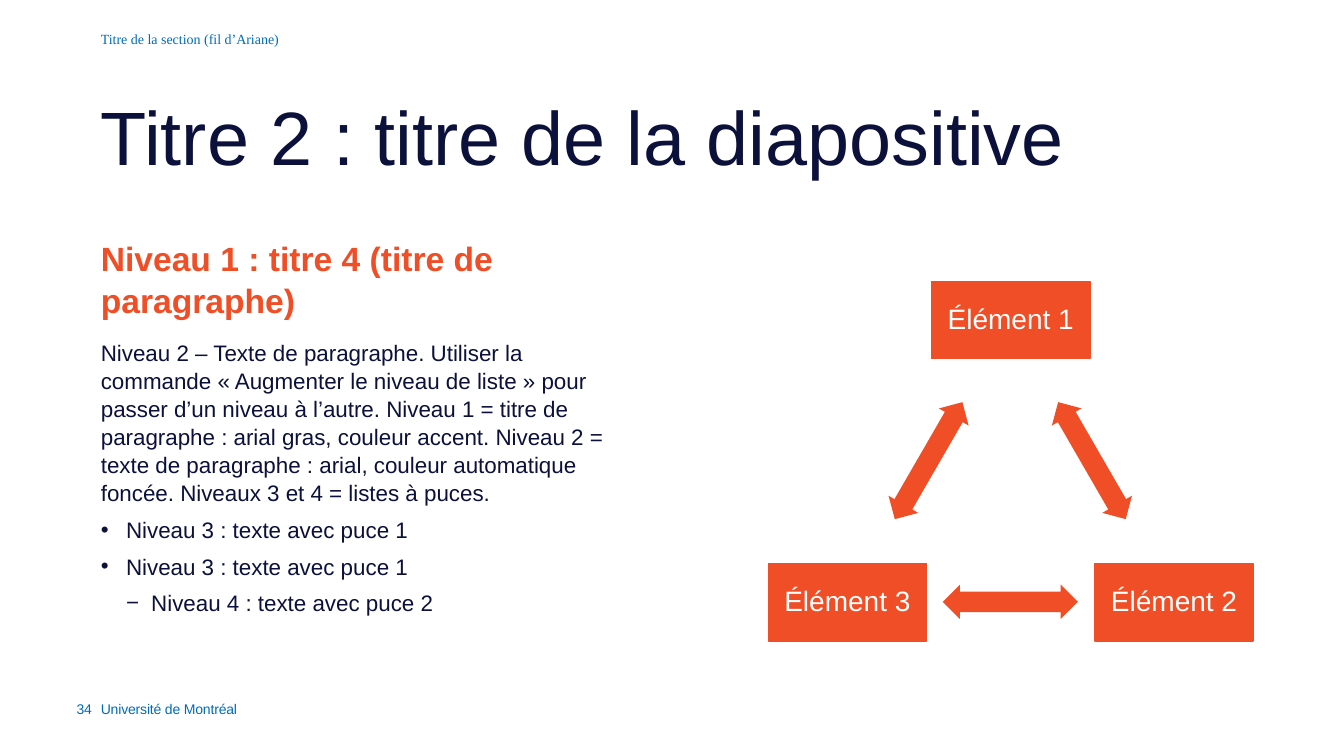
import lxml.etree
import pptx
import pptx.dml.color
import pptx.enum.shapes
import pptx.enum.text
import pptx.oxml.ns
import pptx.util

PX = 9144  # EMU per px, 100 px to the inch
THEME = {
    "accent": "F04E26", "dark": "0B113A", "link": "006CB7", "light": "FFFFFF",
    "title": 54, "heading": 24, "element": 20, "text": 16, "small": 10,
    "sans": "Arial", "serif": "Times New Roman",
}
ALIGN = pptx.enum.text.PP_ALIGN
ANCHOR = pptx.enum.text.MSO_ANCHOR
SHAPE = pptx.enum.shapes.MSO_SHAPE
qn = pptx.oxml.ns.qn


def color(name):
    return pptx.dml.color.RGBColor.from_string(THEME[name])


def write(frame, text, size="text", ink="dark", font="sans", bold=False,
          align=ALIGN.LEFT, anchor=ANCHOR.TOP, inset=0, level=0, line=1.0,
          before=0, after=0, left=0, hang=0, bullet=None, tracking=0):
    """Fill the first empty paragraph of the frame, or append a new one."""
    frame.word_wrap = True
    frame.auto_size = pptx.enum.text.MSO_AUTO_SIZE.NONE
    frame.vertical_anchor = anchor
    frame.margin_left = frame.margin_right = inset * PX
    frame.margin_top = frame.margin_bottom = inset * PX

    paragraph = frame.paragraphs[0] if not frame.text else frame.add_paragraph()
    paragraph.level = level
    paragraph.alignment = align
    paragraph.line_spacing = line
    paragraph.space_before = pptx.util.Pt(before)
    paragraph.space_after = pptx.util.Pt(after)
    properties = paragraph._p.get_or_add_pPr()
    properties.set("marL", str(left * PX))
    properties.set("indent", str(-hang * PX))
    if bullet:
        tint = lxml.etree.SubElement(properties, qn("a:buClr"))
        lxml.etree.SubElement(tint, qn("a:srgbClr"), val=THEME[ink])
        lxml.etree.SubElement(properties, qn("a:buFont"), typeface=THEME[font])
        lxml.etree.SubElement(properties, qn("a:buChar"), char=bullet)
    else:
        lxml.etree.SubElement(properties, qn("a:buNone"))

    run = paragraph.add_run()
    run.text = text
    run.font.name = THEME[font]
    run.font.size = pptx.util.Pt(THEME[size])
    run.font.bold = bold
    run.font.color.rgb = color(ink)
    if tracking:
        run._r.get_or_add_rPr().set("spc", str(tracking))


presentation = pptx.Presentation()
presentation.slide_width = 1333 * PX
presentation.slide_height = 750 * PX
slide = presentation.slides.add_slide(presentation.slide_layouts[3])

# Title, body and breadcrumb
title, body, breadcrumb = slide.placeholders
for holder, box in (
    (title, (100, 94, 1150, 91)),
    (body, (100, 234, 520, 436)),
    (breadcrumb, (100, 30, 484, 45)),
):
    holder.left, holder.top, holder.width, holder.height = (n * PX for n in box)

write(title.text_frame, "Titre 2 : titre de la diapositive", size="title",
      line=0.9, anchor=ANCHOR.MIDDLE)
write(breadcrumb.text_frame, "Titre de la section (fil d’Ariane)", size="small",
      ink="link", font="serif")

write(body.text_frame, "Niveau 1 : titre 4 (titre de paragraphe)", size="heading",
      ink="accent", bold=True, line=1.05, after=6)
write(body.text_frame,
      "Niveau 2 – Texte de paragraphe. Utiliser la commande « Augmenter le niveau "
      "de liste » pour passer d’un niveau à l’autre. Niveau 1 = titre de paragraphe : "
      "arial gras, couleur accent. Niveau 2 = texte de paragraphe : arial, couleur "
      "automatique foncée. Niveaux 3 et 4 = listes à puces.",
      level=1, line=1.05, before=6, after=6)
for text, level, left, bullet in (
    ("Niveau 3 : texte avec puce 1", 2, 25, "•"),
    ("Niveau 3 : texte avec puce 1", 2, 25, "•"),
    ("Niveau 4 : texte avec puce 2", 3, 50, "−"),
):
    write(body.text_frame, text, level=level, line=1.05, after=6,
          left=left, hang=25, bullet=bullet)

# Triangle of elements, with a double arrow halfway along each side
corners = [(1002, 317), (1164, 597), (840, 597)]
for i, (x, y) in enumerate(corners):
    next_x, next_y = corners[(i + 1) % 3]
    middle = ((x + next_x) // 2, (y + next_y) // 2)
    for kind, (center_x, center_y), width, height in (
        (SHAPE.RECTANGLE, (x, y), 157, 77),
        (SHAPE.LEFT_RIGHT_ARROW, middle, 134, 34),
    ):
        part = slide.shapes.add_shape(
            kind, (center_x - width // 2) * PX, (center_y - height // 2) * PX,
            width * PX, height * PX)
        part.shadow.inherit = False
        part.fill.solid()
        part.fill.fore_color.rgb = color("accent")
        if kind == SHAPE.RECTANGLE:
            part.line.color.rgb = color("accent")
            part.line.width = pptx.util.Pt(1)
            write(part.text_frame, f"Élément {i + 1}", size="element", ink="light",
                  align=ALIGN.CENTER, anchor=ANCHOR.MIDDLE, inset=8, line=0.9)
        else:
            part.line.fill.background()
            part.rotation = 60 + 120 * i
            part.adjustments[0] = 0.6
            part.adjustments[1] = 0.5

# Footer
for text, left, width, align, indent in (
    ("34", 50, 45, ALIGN.CENTER, 22),
    ("Université de Montréal", 100, 788, ALIGN.LEFT, 0),
):
    footer = slide.shapes.add_textbox(left * PX, 695 * PX, width * PX, 40 * PX)
    write(footer.text_frame, text, size="small", ink="link", align=align,
          left=indent, tracking=-10)

presentation.save("out.pptx")
